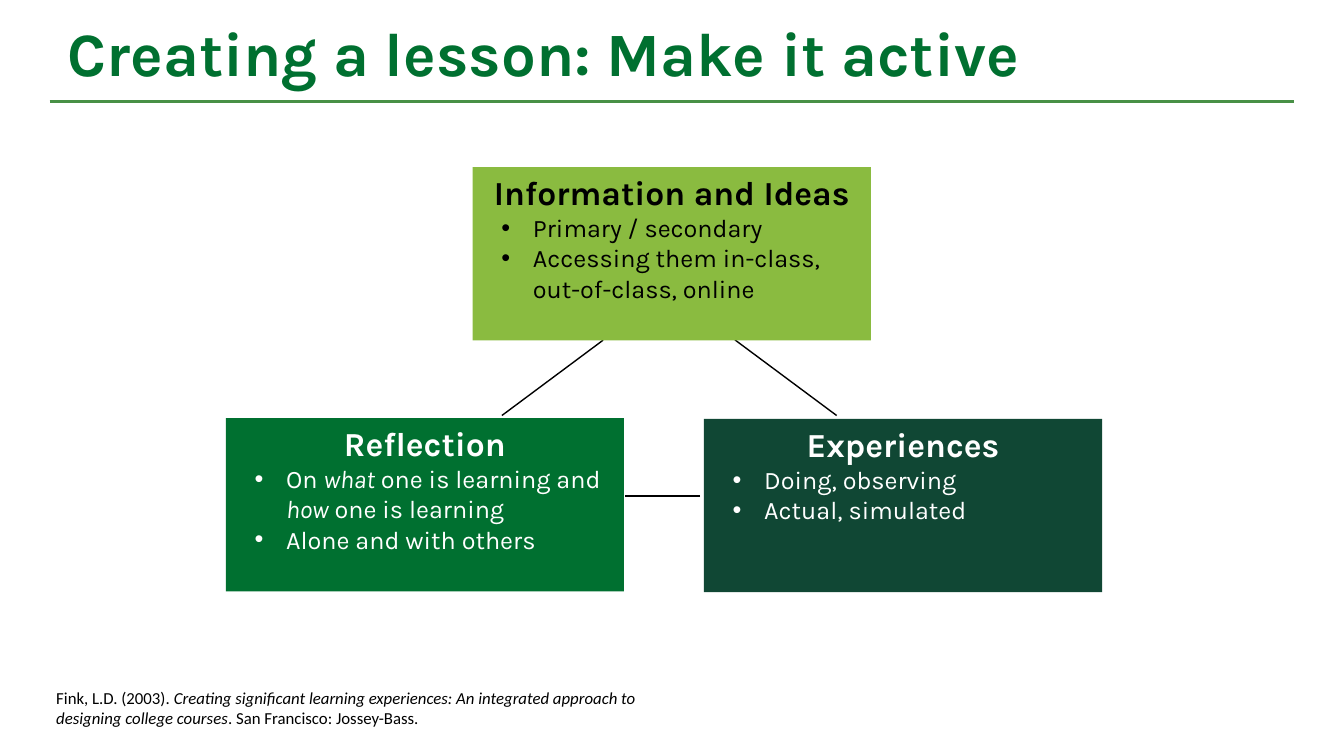
"""Build the slide on active lessons: three linked idea boxes and a citation."""
from dataclasses import dataclass

from lxml import etree
from pptx import Presentation
from pptx.dml.color import RGBColor
from pptx.enum.shapes import MSO_CONNECTOR, MSO_SHAPE
from pptx.enum.text import MSO_ANCHOR, PP_ALIGN
from pptx.oxml.ns import qn
from pptx.util import Pt

RECTANGLE = MSO_SHAPE.RECTANGLE
STRAIGHT = MSO_CONNECTOR.STRAIGHT
TOP = MSO_ANCHOR.TOP
LEFT, CENTER = PP_ALIGN.LEFT, PP_ALIGN.CENTER

BLACK, WHITE, GREEN = "000000", "FFFFFF", "007030"
BOX_WIDTH, BOX_HEIGHT = 284.4, 123.8
BULLET_INDENT, BULLET_HANG = 36, 22.5


@dataclass(frozen=True)
class Piece:
    text: str
    italic: bool = False


@dataclass(frozen=True)
class IdeaBox:
    heading: str
    bullets: list[list[Piece]]
    left: float
    top: float
    fill: str
    ink: str


@dataclass(frozen=True)
class Link:
    start: tuple[float, float]
    end: tuple[float, float]
    color: str = BLACK
    width: float = 1


IDEA_BOXES = [
    IdeaBox("Information and Ideas",
            [[Piece("Primary / secondary")],
             [Piece("Accessing them in-class, out-of-class, online")]],
            337.6, 119.4, "8ABB40", BLACK),
    IdeaBox("Experiences",
            [[Piece("Doing, observing")], [Piece("Actual, simulated")]],
            502.8, 299.2, "104734", WHITE),
    IdeaBox("Reflection",
            [[Piece("On "), Piece("what", True), Piece(" one is learning and "),
              Piece("how", True), Piece(" one is learning")],
             [Piece("Alone and with others")]],
            161.3, 298.6, GREEN, WHITE),
]

LINKS = [
    Link((35.5, 72.5), (924.5, 72.5), "489046", 2.25),
    Link((597.6, 296.8), (525, 242.8)),
    Link((500.2, 354.4), (446.4, 354.4)),
    Link((358.5, 296.8), (430.8, 243)),
]

CITATION = [
    Piece("Fink, L.D. (2003). "),
    Piece("Creating significant learning experiences: "
          "An integrated approach to designing college courses", True),
    Piece(". San Francisco: Jossey-Bass."),
]


def rgb(color: str) -> RGBColor:
    return RGBColor.from_string(color)


def write(paragraph, pieces: list[Piece], size: float, color: str,
          bold: bool = False, family: str = "Karla", align=LEFT) -> None:
    paragraph.alignment = align
    for piece in pieces:
        run = paragraph.add_run()
        run.text = piece.text
        formats = {"name": family, "size": Pt(size), "bold": bold,
                   "italic": piece.italic}
        for attribute, value in formats.items():
            setattr(run.font, attribute, value)
        run.font.color.rgb = rgb(color)


def add_bullet(paragraph) -> None:
    properties = paragraph._p.get_or_add_pPr()
    properties.set("marL", str(Pt(BULLET_INDENT)))
    properties.set("indent", str(-Pt(BULLET_HANG)))
    etree.SubElement(properties, qn("a:buFont"), typeface="Arial")
    etree.SubElement(properties, qn("a:buChar"), char="•")


def add_text(slide, left: float, top: float, width: float, height: float):
    frame = slide.shapes.add_textbox(
        Pt(left), Pt(top), Pt(width), Pt(height)).text_frame
    frame.word_wrap = True
    return frame.paragraphs[0]


def draw_box(slide, box: IdeaBox) -> None:
    panel = slide.shapes.add_shape(
        RECTANGLE, Pt(box.left), Pt(box.top), Pt(BOX_WIDTH), Pt(BOX_HEIGHT))
    panel.shadow.inherit = False
    panel.fill.solid()
    panel.fill.fore_color.rgb = rgb(box.fill)
    panel.line.fill.background()
    frame = panel.text_frame
    frame.word_wrap = True
    frame.vertical_anchor = TOP
    write(frame.paragraphs[0], [Piece(box.heading)], 24, box.ink,
          bold=True, align=CENTER)
    for pieces in box.bullets:
        paragraph = frame.add_paragraph()
        add_bullet(paragraph)
        write(paragraph, pieces, 18, box.ink)


def draw_link(slide, link: Link) -> None:
    stroke = slide.shapes.add_connector(
        STRAIGHT, *(Pt(value) for value in link.start + link.end))
    stroke.line.color.rgb = rgb(link.color)
    stroke.line.width = Pt(link.width)
    etree.SubElement(stroke._element.spPr, qn("a:effectLst"))


def main() -> None:
    deck = Presentation()
    deck.slide_width, deck.slide_height = Pt(960), Pt(540)
    slide = deck.slides.add_slide(deck.slide_layouts[6])

    title = add_text(slide, 41, 13, 864, 90)
    title.line_spacing = 0.9
    write(title, [Piece("Creating a lesson: Make it active")], 44, GREEN, bold=True)
    for link in LINKS:
        draw_link(slide, link)
    for box in IDEA_BOXES:
        draw_box(slide, box)
    citation = add_text(slide, 33.1, 487.4, 468, 36)
    write(citation, CITATION, 12, BLACK, family="Calibri")

    deck.save("out.pptx")


if __name__ == "__main__":
    main()
